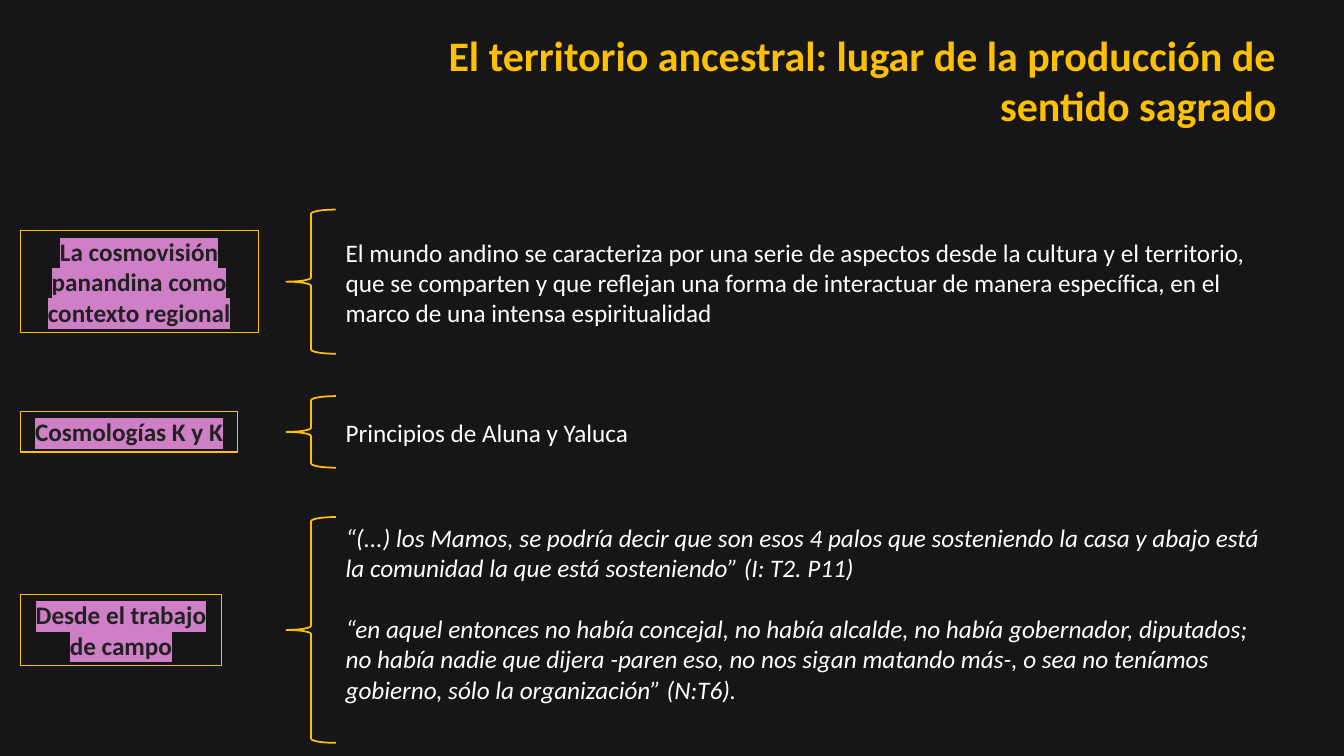
from lxml import etree
from pptx import Presentation
from pptx.dml.color import RGBColor
from pptx.enum.shapes import MSO_SHAPE
from pptx.enum.text import MSO_ANCHOR, PP_ALIGN
from pptx.oxml.ns import qn
from pptx.util import Inches, Pt

LEFT, CENTER, RIGHT = PP_ALIGN.LEFT, PP_ALIGN.CENTER, PP_ALIGN.RIGHT
MIDDLE = MSO_ANCHOR.MIDDLE
BRACE = MSO_SHAPE.LEFT_BRACE
FONT = "Calibri"
COLORS = {
    "background": "161616",
    "gold": "FFC000",
    "white": "FFFFFF",
    "dark": "212123",
    "highlight": "CF7FC5",
}
LABEL_LEFT, BRACE_LEFT, BRACE_WIDTH = 0.2, 2.84, 0.49
BODY_LEFT, BODY_WIDTH = BRACE_LEFT + BRACE_WIDTH, 9.43

TITLE = "El territorio ancestral: lugar de la producción de sentido sagrado"
ROWS = [
    {
        "top": 2.08, "height": 1.43, "body_top": 2.3, "body_height": 1.01,
        "label": "La cosmovisión panandina como contexto regional",
        "label_width": 2.36, "label_height": 1.01,
        "body": ["El mundo andino se caracteriza por una serie de aspectos desde la "
                 "cultura y el territorio, que se comparten y que reflejan una forma de "
                 "interactuar de manera específica, en el marco de una intensa espiritualidad"],
        "italic": False,
    },
    {
        "top": 3.93, "height": 0.71, "body_top": 4.09, "body_height": 0.4,
        "label": "Cosmologías K y K",
        "label_width": 2.16, "label_height": 0.4,
        "body": ["Principios de Aluna y Yaluca"],
        "italic": False,
    },
    {
        "top": 5.13, "height": 2.24, "body_top": 5.13, "body_height": 1.92,
        "label": "Desde el trabajo de campo",
        "label_width": 2, "label_height": 0.71,
        "body": ["“(...) los Mamos, se podría decir que son esos 4 palos que sosteniendo "
                 "la casa y abajo está la comunidad la que está sosteniendo” (I: T2. P11)",
                 "“en aquel entonces no había concejal, no había alcalde, no había "
                 "gobernador, diputados; no había nadie que dijera -paren eso, no nos sigan "
                 "matando más-, o sea no teníamos gobierno, sólo la organización” (N:T6)."],
        "italic": True,
    },
]


def color(name):
    return RGBColor.from_string(COLORS[name])


def add_highlight(span, name):
    mark = etree.SubElement(span.font._element, qn("a:highlight"))
    etree.SubElement(mark, qn("a:srgbClr"), val=COLORS[name])


def add_text(page, paragraphs, left, top, width, height, size=18, ink="white",
             bold=False, italic=False, align=LEFT, highlight=None, gap=22):
    box = page.shapes.add_textbox(Inches(left), Inches(top), Inches(width), Inches(height))
    frame = box.text_frame
    frame.word_wrap = True
    for index, text in enumerate(paragraphs):
        para = frame.add_paragraph() if index else frame.paragraphs[0]
        para.alignment = align
        if index:
            para.space_before = Pt(gap)
        span = para.add_run()
        span.text = text
        span.font.size = Pt(size)
        span.font.bold = bold
        span.font.italic = italic
        span.font.color.rgb = color(ink)
        if highlight:
            add_highlight(span, highlight)
        span.font.name = FONT
    return box


def add_outline(shape, width):
    shape.line.color.rgb = color("gold")
    shape.line.width = Pt(width)


def add_row(page, row):
    middle = row["top"] + row["height"] / 2
    label = add_text(page, [row["label"]], LABEL_LEFT, middle - row["label_height"] / 2,
                     row["label_width"], row["label_height"], ink="dark", bold=True,
                     align=CENTER, highlight="highlight")
    label.text_frame.vertical_anchor = MIDDLE
    add_outline(label, 0.75)

    brace = page.shapes.add_shape(BRACE, Inches(BRACE_LEFT), Inches(row["top"]),
                                  Inches(BRACE_WIDTH), Inches(row["height"]))
    brace.shadow.inherit = False
    brace.fill.background()
    add_outline(brace, 1.25)

    add_text(page, row["body"], BODY_LEFT, row["body_top"], BODY_WIDTH,
             row["body_height"], italic=row["italic"])


def build_slide(deck):
    page = deck.slides.add_slide(deck.slide_layouts[6])
    page.background.fill.solid()
    page.background.fill.fore_color.rgb = color("background")
    add_text(page, [TITLE], 4.04, 0.24, 8.72, 1.11, size=30, ink="gold",
             bold=True, align=RIGHT)
    for row in ROWS:
        add_row(page, row)


def main():
    deck = Presentation()
    deck.slide_width, deck.slide_height = Inches(13.33), Inches(7.5)
    build_slide(deck)
    deck.save("out.pptx")


if __name__ == "__main__":
    main()
